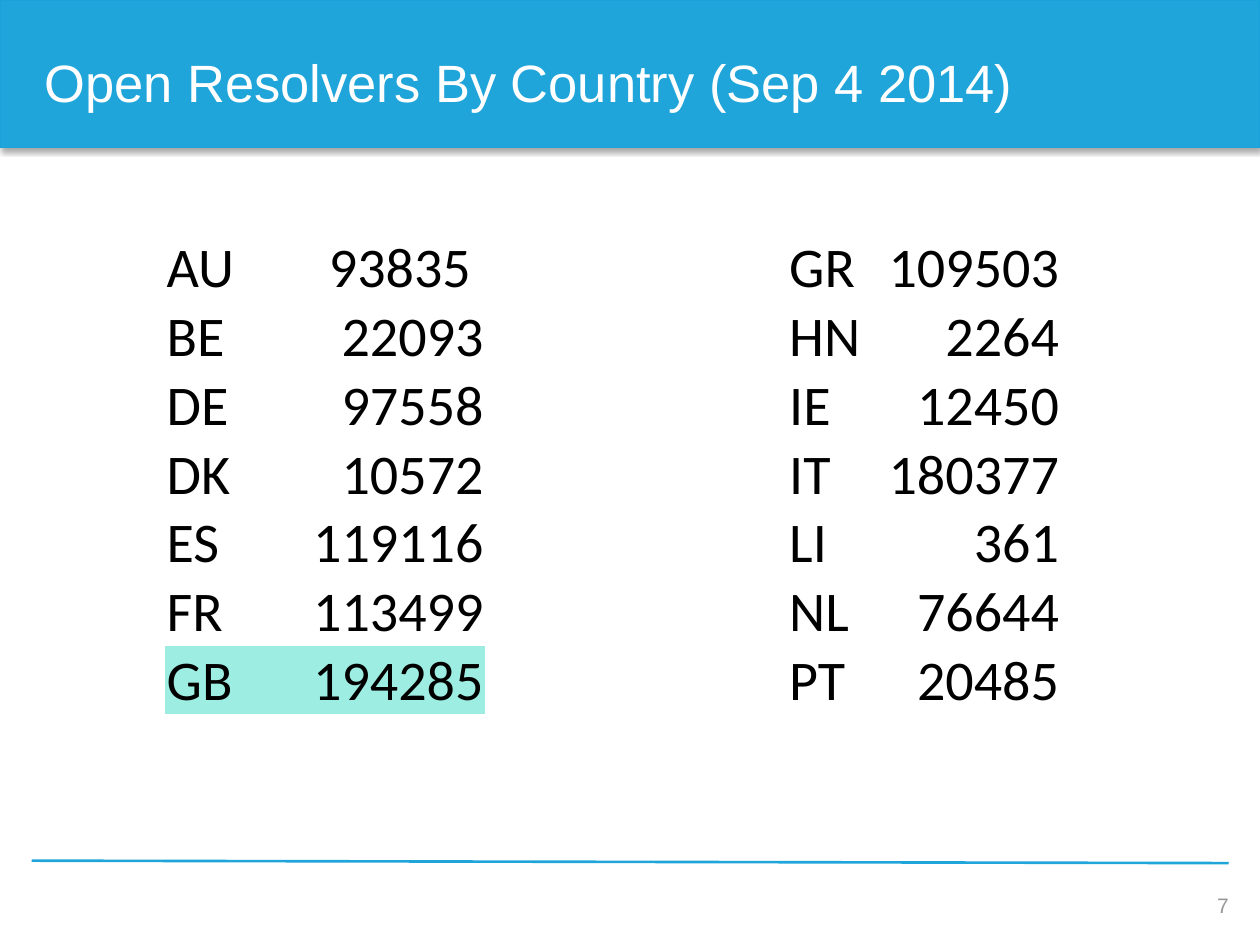
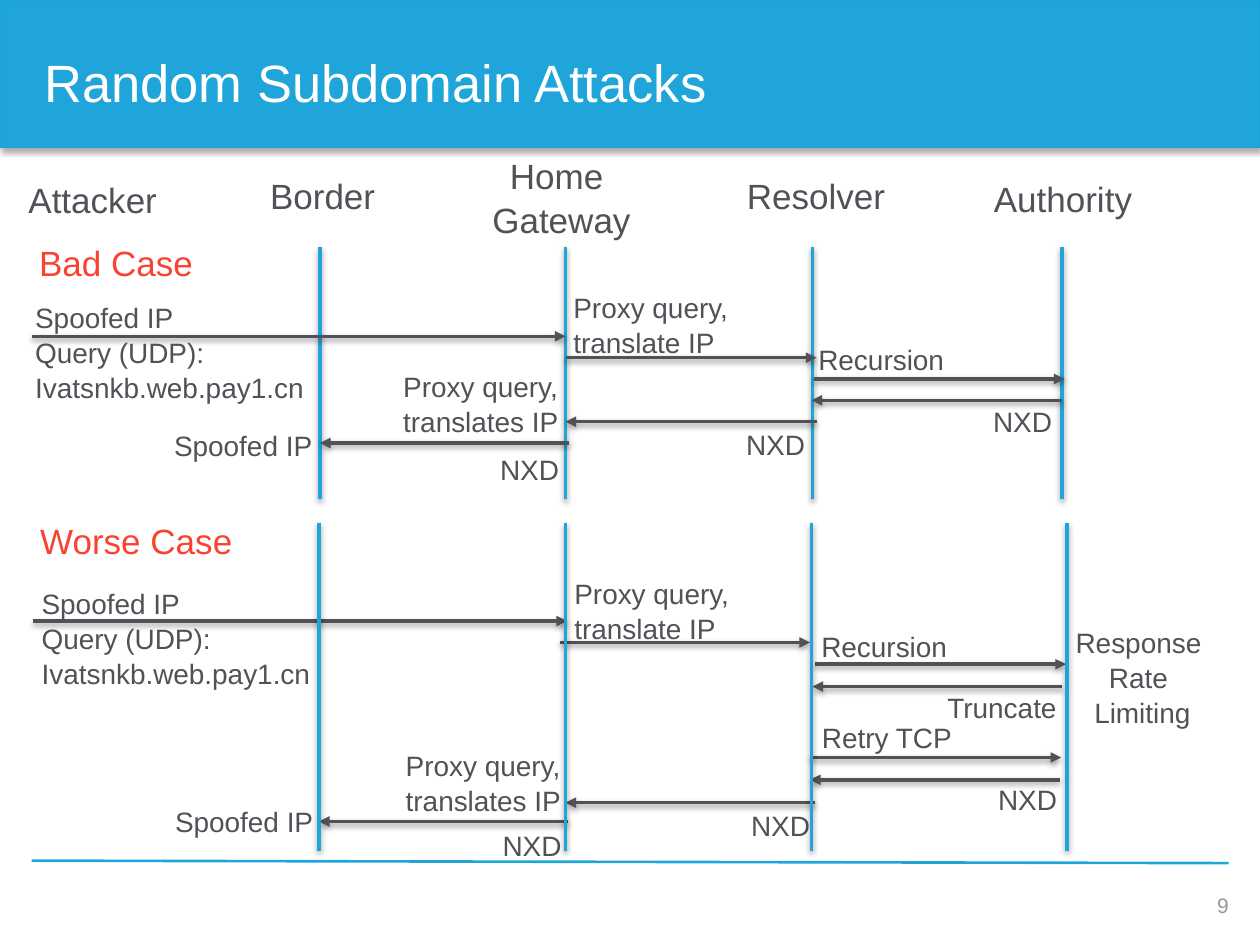
from lxml import etree
from pptx import Presentation
from pptx import util as u
from pptx.dml.color import RGBColor
from pptx.enum import shapes, text
from pptx.oxml import ns

BLUE, EDGE, GREY, RED = "1FA5DA", "1AA3DA", "525157", "F94330"
WHITE, BLACK, PAGE_GREY, MINT = "FFFFFF", "000000", "98989A", "9DEDE2"
LEFT, CENTER, RIGHT = text.PP_ALIGN.LEFT, text.PP_ALIGN.CENTER, text.PP_ALIGN.RIGHT
NO_STYLE_NO_GRID = "{2D5ABB26-0587-4C30-8999-92F81FD0307C}"

QUERY = ["Spoofed IP", "Query (UDP):", "Ivatsnkb.web.pay1.cn"]
PROXY_OUT = ["Proxy query,", "translate IP"]
PROXY_BACK = ["Proxy query,", "translates IP"]


def rgb(hex_colour):
    return RGBColor.from_string(hex_colour)


def add_shadow(shape, alpha, distance):
    """Give a shape or connector a soft shadow below it (alpha in %, distance in EMU)."""
    sp_pr = shape._element.spPr
    for old in sp_pr.findall(ns.qn("a:effectLst")):
        sp_pr.remove(old)
    effects = etree.SubElement(sp_pr, ns.qn("a:effectLst"))
    if alpha:
        outer = etree.SubElement(effects, ns.qn("a:outerShdw"), blurRad="40000",
                                 dist=str(distance), dir="5400000", rotWithShape="0")
        colour = etree.SubElement(outer, ns.qn("a:srgbClr"), val=BLACK)
        etree.SubElement(colour, ns.qn("a:alpha"), val=str(alpha * 1000))


class Deck:
    def __init__(self):
        self.prs = Presentation()
        self.prs.slide_width, self.prs.slide_height = u.Cm(25.4), u.Cm(19.05)
        self.s = None

    def new_slide(self, title, number):
        self.s = self.prs.slides.add_slide(self.prs.slide_layouts[5])
        self.band()
        self.line(0.64, 17.35, 24.77, 17.4, BLUE, width=1.5, shadow=0)
        self.label(18.85, 17.4, 5.92, [number], size=12, colour=PAGE_GREY, align=RIGHT,
                   height=1.02, top_inset=0.64, anchor=text.MSO_ANCHOR.MIDDLE)
        self.title(title)

    def band(self):
        sp = self.s.shapes.add_shape(shapes.MSO_SHAPE.RECTANGLE, 0, 0,
                                     self.prs.slide_width, u.Cm(2.97))
        sp.fill.solid()
        sp.fill.fore_color.rgb = rgb(BLUE)
        sp.line.color.rgb = rgb(EDGE)
        sp.line.width = u.Pt(0.75)
        add_shadow(sp, 35, 23000)
        self.s.shapes._spTree.insert(2, sp._element)  # behind the title

    def title(self, words):
        sp = self.s.shapes.title
        sp.left, sp.top, sp.width, sp.height = map(u.Cm, (0.64, 0.66, 24.15, 2.11))
        tf = sp.text_frame
        tf.auto_size = text.MSO_AUTO_SIZE.NONE
        tf.vertical_anchor = text.MSO_ANCHOR.MIDDLE
        self.add_text(tf.paragraphs[0], words, 30, WHITE, LEFT, spacing=0.9)

    def add_text(self, p, words, size, colour, align, font="Arial", spacing=None):
        p.alignment = align
        p.line_spacing = spacing
        r = p.add_run()
        r.text = words
        r.font.size, r.font.name = u.Pt(size), font
        r.font.color.rgb = rgb(colour)

    def label(self, x, y, width, lines, size=16, colour=GREY, align=LEFT,
              height=None, top_inset=0, anchor=text.MSO_ANCHOR.TOP):
        height = height or 0.0425 * size * len(lines)
        sp = self.s.shapes.add_textbox(*map(u.Cm, (x, y, width, height)))
        tf = sp.text_frame
        tf.word_wrap = False
        tf.vertical_anchor = anchor
        tf.margin_left = tf.margin_right = tf.margin_bottom = 0
        tf.margin_top = u.Cm(top_inset)
        for i, words in enumerate(lines):
            p = tf.add_paragraph() if i else tf.paragraphs[0]
            self.add_text(p, words, size, colour, align, spacing=1.05)

    def line(self, x1, y1, x2, y2, colour, width=2, shadow=38, arrow=False):
        c = self.s.shapes.add_connector(shapes.MSO_CONNECTOR.STRAIGHT,
                                        *map(u.Cm, (x1, y1, x2, y2)))
        c.line.color.rgb = rgb(colour)
        c.line.width = u.Pt(width)
        if arrow:
            etree.SubElement(c.line._get_or_add_ln(), ns.qn("a:tailEnd"), type="triangle")
        add_shadow(c, shadow, 20000)

    def lifelines(self, xs, top, bottom):
        for x in xs:
            self.line(x, top, x, bottom, BLUE)

    def messages(self, arrows):
        for x1, x2, y in arrows:
            self.line(x1, y, x2, y, GREY, arrow=True)

    def table(self, x, y, widths, rows, highlight=None):
        """Country codes left, counts right; the highlighted code gets a filled row."""
        frame = self.s.shapes.add_table(len(rows), 2, u.Cm(x), u.Cm(y),
                                        u.Cm(sum(widths)), u.Cm(1.38 * len(rows)))
        table = frame.table
        table.first_row = table.horz_banding = False
        table._tbl.tblPr.find(ns.qn("a:tableStyleId")).text = NO_STYLE_NO_GRID
        for column, width in zip(table.columns, widths):
            column.width = u.Cm(width)
        for i, row in enumerate(rows):
            for j, words in enumerate(row):
                cell = table.cell(i, j)
                cell.margin_left = cell.margin_right = cell.margin_top = u.Cm(0.03)
                cell.margin_bottom = 0
                cell.vertical_anchor = text.MSO_ANCHOR.BOTTOM
                if row[0] == highlight:
                    cell.fill.solid()
                    cell.fill.fore_color.rgb = rgb(MINT)
                else:
                    cell.fill.background()
                self.add_text(cell.text_frame.paragraphs[0], words, 32, BLACK,
                              RIGHT if j else LEFT, font="Calibri")


def resolvers_slide(deck):
    deck.new_slide("Open Resolvers By Country (Sep 4 2014)", "7")
    deck.table(3.33, 4.7, (2.08, 4.37), [
        ("AU", "93835 "), ("BE", "22093"), ("DE", "97558"), ("DK", "10572"),
        ("ES", "119116"), ("FR", "113499"), ("GB", "194285")], highlight="GB")
    deck.table(15.88, 4.7, (1.75, 3.75), [
        ("GR", "109503"), ("HN", "2264"), ("IE", "12450"), ("IT", "180377"),
        ("LI", "361"), ("NL", "76644"), ("PT", "20485")])


def attacks_slide(deck):
    deck.new_slide("Random Subdomain Attacks", "9")
    for x, y, width, lines in [
            (0.56, 3.56, 2.62, ["Attacker"]), (5.44, 3.48, 2.13, ["Border"]),
            (9.91, 3.07, 2.82, ["Home ", "Gateway"]),
            (15.04, 3.48, 2.82, ["Resolver"]), (20.02, 3.53, 2.82, ["Authority"])]:
        deck.label(x, y, width, lines, size=20, align=CENTER)

    # Bad case: messages fall at equal steps
    deck.lifelines((6.45, 11.4, 16.38, 21.41), 4.98, 10.06)
    spans = [(0.64, 11.4), (11.4, 16.46), (16.41, 21.46),
             (21.41, 16.36), (16.46, 11.4), (11.48, 6.45)]
    deck.messages((x1, x2, 6.78 + 0.43 * i) for i, (x1, x2) in enumerate(spans))
    deck.label(0.79, 4.83, 3.12, ["Bad Case"], size=20, colour=RED)
    for x, y, width, lines in [
            (0.71, 6.02, 5.49, QUERY), (11.56, 5.82, 3.18, PROXY_OUT),
            (8.13, 7.42, 3.18, PROXY_BACK), (3.51, 8.61, 2.82, ["Spoofed IP"])]:
        deck.label(x, y, width, lines)
    for x, y, width, words in [
            (16.48, 6.88, 2.57, "Recursion"), (20.02, 8.13, 1.19, "NXD"),
            (15.04, 8.59, 1.19, "NXD"), (10.08, 9.09, 1.19, "NXD")]:
        deck.label(x, y, width, [words], align=CENTER)

    # Worse case: the authority truncates, the resolver retries over TCP
    deck.messages([
        (0.66, 11.43, 12.52), (11.28, 16.33, 12.95), (16.43, 21.49, 13.39),
        (21.41, 16.38, 13.84), (16.33, 21.39, 15.27), (21.36, 16.33, 15.72),
        (16.43, 11.4, 16.18), (11.46, 6.43, 16.56)])
    deck.label(0.81, 10.44, 3.91, ["Worse Case"], size=20, colour=RED)
    for x, y, width, lines in [
            (0.84, 11.79, 5.49, QUERY), (11.58, 11.58, 3.18, PROXY_OUT),
            (8.18, 15.06, 3.18, PROXY_BACK), (3.53, 16.18, 2.82, ["Spoofed IP"])]:
        deck.label(x, y, width, lines)
    for x, y, width, lines in [
            (16.54, 12.65, 2.57, ["Recursion"]), (19.08, 13.89, 2.24, ["Truncate"]),
            (21.67, 12.57, 2.72, ["Response ", "Rate ", "Limiting"]),
            (16.56, 14.5, 2.64, ["Retry TCP"]), (20.12, 15.75, 1.19, ["NXD"]),
            (15.14, 16.26, 1.19, ["NXD"]), (10.13, 16.66, 1.19, ["NXD"])]:
        deck.label(x, y, width, lines, align=CENTER)
    deck.lifelines((6.43, 11.4, 16.36, 21.51), 10.54, 17.15)


def main():
    deck = Deck()
    resolvers_slide(deck)
    attacks_slide(deck)
    deck.prs.save("out.pptx")


if __name__ == "__main__":
    main()
